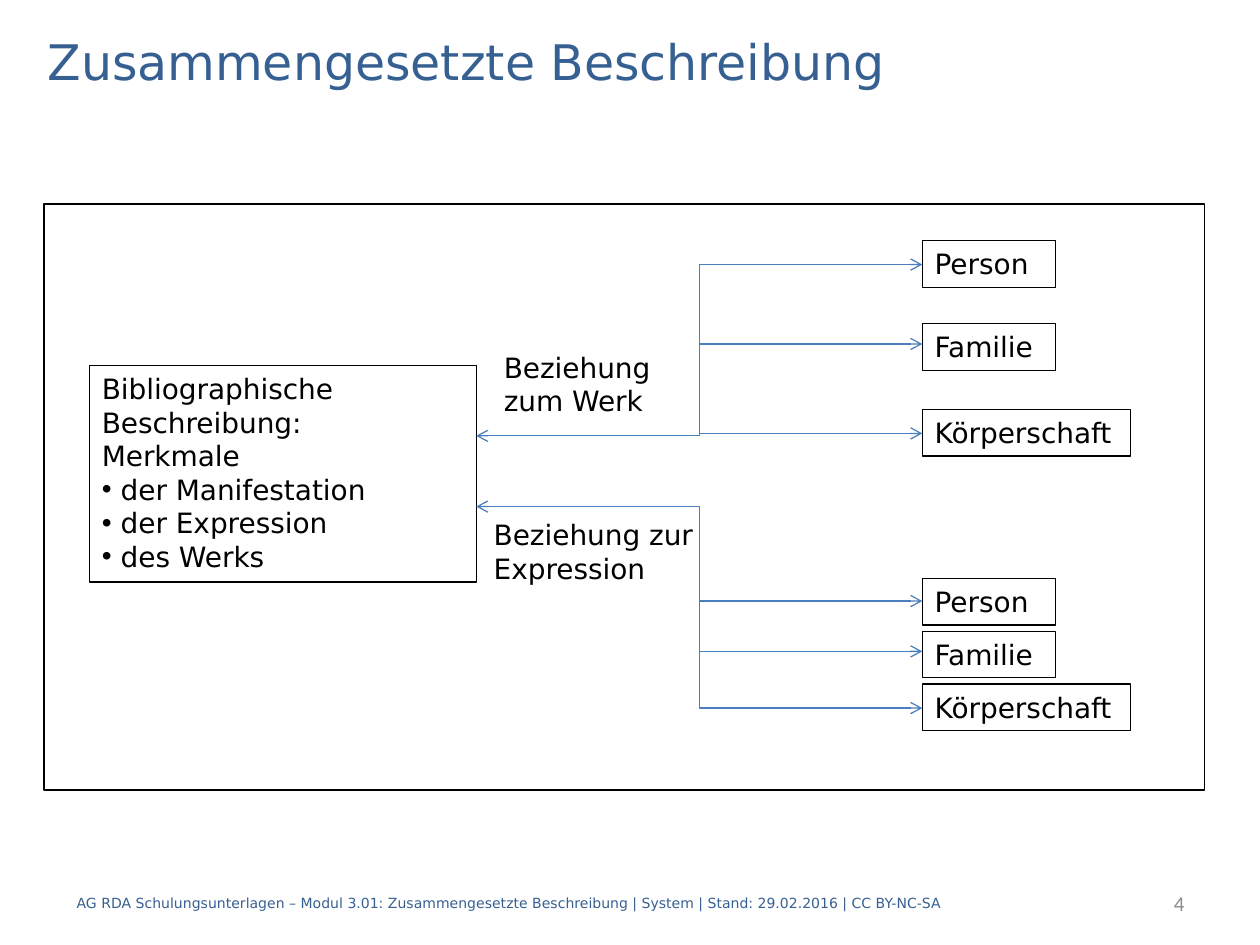
"""Build the slide on composite description and its relationships."""
from dataclasses import dataclass

from lxml import etree
from pptx import Presentation, util as u
from pptx.dml.color import RGBColor
from pptx.enum import shapes, text
from pptx.oxml.ns import qn

BLUE, BLACK, GREY, ARROW = "376092", "000000", "8C8C8C", "4B7EBC"
ENTITY_LEFT, TRUNK, DESCRIPTION_RIGHT = 7.32, 5.55, 3.78


@dataclass
class Label:
    wording: str
    left: float
    top: float
    width: float
    height: float
    size: float = 16
    color: str = BLACK
    font: str = "DejaVu Sans"
    anchor: text.MSO_ANCHOR = text.MSO_ANCHOR.TOP
    align: text.PP_ALIGN = text.PP_ALIGN.LEFT
    boxed: bool = False


@dataclass
class Arrow:
    start: tuple[float, float]
    end: tuple[float, float]
    bend: float | None = None
    both_ends: bool = False


def rgb(value: str) -> RGBColor:
    return RGBColor.from_string(value)


def draw_frame(slide, left: float, top: float, width: float, height: float):
    frame = slide.shapes.add_shape(
        shapes.MSO_SHAPE.RECTANGLE, *map(u.Inches, (left, top, width, height)))
    frame.shadow.inherit = False
    frame.fill.background()
    frame.line.color.rgb = rgb(BLACK)
    frame.line.width = u.Pt(0.75)
    return frame


def draw_label(slide, label: Label):
    place = (label.left, label.top, label.width, label.height)
    if label.boxed:
        holder = draw_frame(slide, *place)
    else:
        holder = slide.shapes.add_textbox(*map(u.Inches, place))
    body = holder.text_frame
    body.text = label.wording
    body.word_wrap = True
    body.vertical_anchor = label.anchor
    for paragraph in body.paragraphs:
        paragraph.alignment = label.align
        for run in paragraph.runs:
            run.font.size = u.Pt(label.size)
            run.font.name = label.font
            run.font.color.rgb = rgb(label.color)
    return holder


def add_bullet(paragraph) -> None:
    properties = paragraph._p.get_or_add_pPr()
    indent = u.Inches(0.15)
    properties.set("marL", str(indent))
    properties.set("indent", str(-indent))
    etree.SubElement(properties, qn("a:buFont"), typeface="Arial")
    etree.SubElement(properties, qn("a:buChar"), char="•")


def draw_arrow(slide, arrow: Arrow) -> None:
    kind = (shapes.MSO_CONNECTOR.STRAIGHT if arrow.bend is None
            else shapes.MSO_CONNECTOR.ELBOW)
    connector = slide.shapes.add_connector(
        kind, *map(u.Inches, arrow.start + arrow.end))
    connector.line.color.rgb = rgb(ARROW)
    connector.line.width = u.Pt(0.75)
    properties = connector._element.spPr
    if arrow.bend is not None:
        guides = properties.find(qn("a:prstGeom")).get_or_add_avLst()
        etree.SubElement(guides, qn("a:gd"), name="adj1",
                         fmla=f"val {round(arrow.bend * 100000)}")
    outline = connector.line._get_or_add_ln()
    for tag in ["a:headEnd"] * arrow.both_ends + ["a:tailEnd"]:
        etree.SubElement(outline, qn(tag), type="arrow")
    etree.SubElement(properties, qn("a:effectLst"))


def main() -> None:
    deck = Presentation()
    deck.slide_width, deck.slide_height = u.Inches(10), u.Inches(7.5)
    slide = deck.slides.add_slide(deck.slide_layouts[6])
    middle = text.MSO_ANCHOR.MIDDLE

    captions = [
        Label("Zusammengesetzte Beschreibung", 0.28, 0.2, 9.45, 0.56,
              size=28, color=BLUE, anchor=middle),
        Label("4", 7.91, 6.97, 1.59, 0.4, size=12, color=GREY, font="Calibri",
              anchor=middle, align=text.PP_ALIGN.RIGHT),
        Label("AG RDA Schulungsunterlagen – Modul 3.01: Zusammengesetzte "
              "Beschreibung | System | Stand: 29.02.2016 | CC BY-NC-SA",
              0.51, 6.97, 8.74, 0.4, size=8, color=BLUE, anchor=middle),
        Label("Beziehung zum Werk", 3.9, 2.73, 1.46, 0.64),
        Label("Beziehung zur Expression", 3.82, 4.06, 2.13, 0.64),
    ]
    for caption in captions:
        draw_label(slide, caption)

    description = draw_label(slide, Label(
        "Bibliographische Beschreibung:\nMerkmale\nder Manifestation\n"
        "der Expression\ndes Werks", 0.71, 2.9, 3.07, 1.72, boxed=True))
    for feature in description.text_frame.paragraphs[2:]:
        add_bullet(feature)

    entity_widths = {"Person": 1.06, "Familie": 1.06, "Körperschaft": 1.65}
    for tops in [(1.91, 2.57, 3.25), (4.59, 5.01, 5.43)]:
        for (entity, width), top in zip(entity_widths.items(), tops):
            draw_label(slide, Label(entity, ENTITY_LEFT, top, width, 0.37,
                                    boxed=True))

    draw_frame(slide, 0.35, 1.62, 9.21, 4.65)

    for description_y, person_y in [(3.46, 2.1), (4.02, 4.77)]:
        draw_arrow(slide, Arrow((DESCRIPTION_RIGHT, description_y),
                                (ENTITY_LEFT, person_y), 0.5, True))
    for branch_y in (2.73, 3.44, 5.17):
        draw_arrow(slide, Arrow((TRUNK, branch_y), (ENTITY_LEFT, branch_y)))
    draw_arrow(slide, Arrow((TRUNK, 4.69), (ENTITY_LEFT, 5.62), 0))

    deck.save("out.pptx")


if __name__ == "__main__":
    main()
